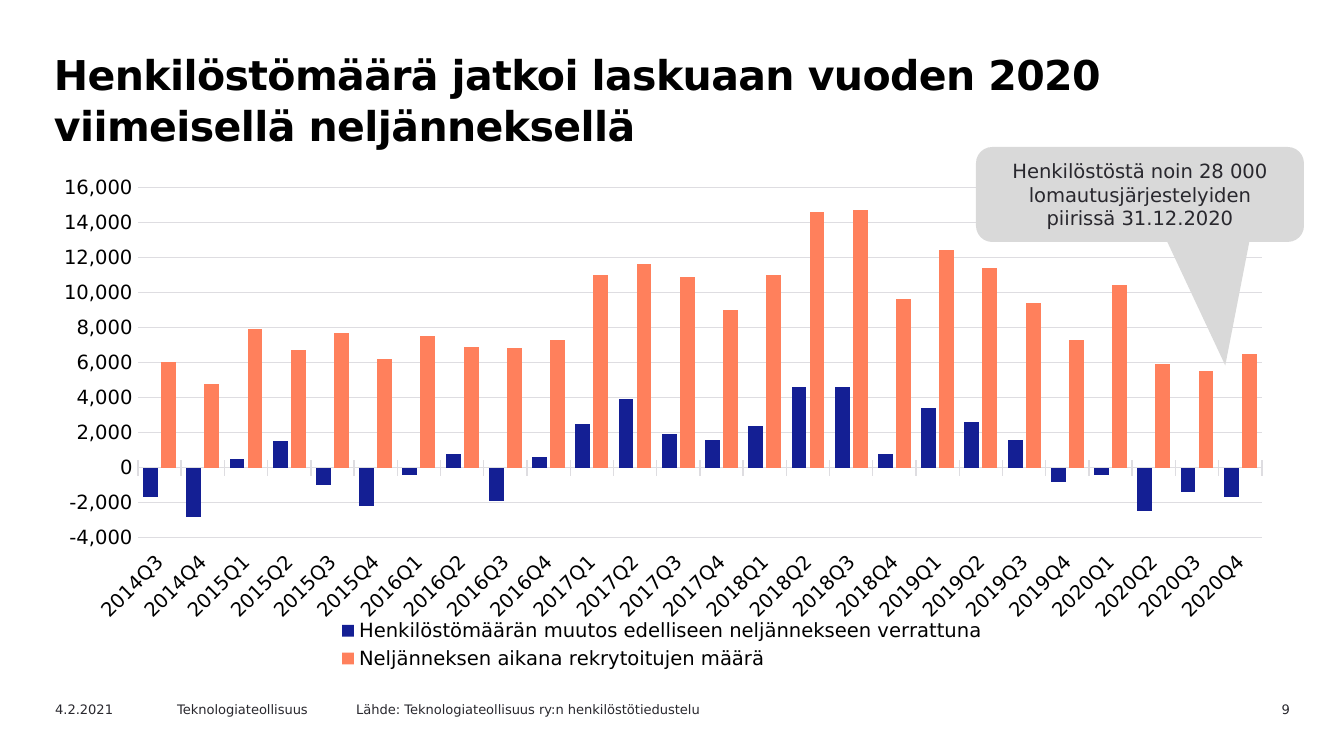
from lxml.etree import SubElement
from pptx import Presentation
from pptx.chart.data import CategoryChartData
from pptx.dml.color import RGBColor
from pptx.enum.chart import XL_CHART_TYPE, XL_LEGEND_POSITION, XL_TICK_LABEL_POSITION, XL_TICK_MARK
from pptx.enum.shapes import MSO_SHAPE
from pptx.enum.text import MSO_ANCHOR, MSO_AUTO_SIZE, PP_ALIGN
from pptx.oxml.ns import qn
from pptx.util import Emu, Pt

SCALE = 914400 / 134.4
FONT = "DejaVu Sans"
BLACK, DARK, GRID = "000000", "29282E", "DEDDE1"


def px(*lengths):
    return [Emu(round(length * SCALE)) for length in lengths]


def style(font, size, color, bold=False):
    font.name = FONT
    font.size = Pt(size)
    font.bold = bold
    font.color.rgb = RGBColor.from_string(color)


presentation = Presentation()
presentation.slide_width, presentation.slide_height = px(1344, 756)
slide = presentation.slides.add_slide(presentation.slide_layouts[5])

# Title
title = slide.shapes.title
title.left, title.top, title.width, title.height = px(38, 42, 1153, 95)
title_frame = title.text_frame
title_frame.text = "Henkilöstömäärä jatkoi laskuaan vuoden 2020 viimeisellä neljänneksellä"
title_frame.word_wrap = True
title_frame.auto_size = MSO_AUTO_SIZE.NONE
title_frame.vertical_anchor = MSO_ANCHOR.TOP
title_frame.margin_left = px(16)[0]
paragraph = title_frame.paragraphs[0]
paragraph.alignment = PP_ALIGN.LEFT
paragraph.line_spacing = Pt(27)
style(paragraph.runs[0].font, 22, BLACK, bold=True)
paragraph.runs[0]._r.get_or_add_rPr().set("spc", "-30")

# Footer line
footers = [
    ("4.2.2021", 42, 134, PP_ALIGN.LEFT),
    ("Teknologiateollisuus", 164, 191, PP_ALIGN.LEFT),
    ("Lähde: Teknologiateollisuus ry:n henkilöstötiedustelu", 343, 437, PP_ALIGN.LEFT),
    ("9", 1177, 126, PP_ALIGN.RIGHT),
]
for text, left, width, alignment in footers:
    footer = slide.shapes.add_textbox(*px(left, 695, width, 24))
    footer.text_frame.word_wrap = True
    footer.text_frame.text = text
    paragraph = footer.text_frame.paragraphs[0]
    paragraph.alignment = alignment
    style(paragraph.runs[0].font, 7, DARK)

# Chart data: quarters from 2014Q3 to 2020Q4
chart_data = CategoryChartData(number_format="#,##0")
chart_data.categories = [f"{2014 + n // 4}Q{n % 4 + 1}" for n in range(2, 28)]
chart_data.add_series(
    "Henkilöstömäärän muutos edelliseen neljännekseen verrattuna",
    [-1700, -2800, 500, 1500, -1000, -2200, -400, 800, -1900, 600, 2500, 3900, 1900,
     1600, 2400, 4600, 4600, 800, 3400, 2600, 1600, -800, -400, -2500, -1400, -1700])
chart_data.add_series(
    "Neljänneksen aikana rekrytoitujen määrä",
    [6000, 4800, 7900, 6700, 7700, 6200, 7500, 6900, 6800, 7300, 11000, 11600, 10900,
     9000, 11000, 14600, 14700, 9600, 12400, 11400, 9400, 7300, 10400, 5900, 5500, 6500])

# Column chart
chart = slide.shapes.add_chart(
    XL_CHART_TYPE.COLUMN_CLUSTERED, *px(38, 167, 1249, 508), chart_data).chart
style(chart.font, 10, DARK)
chart.has_title = False
plot = chart.plots[0]
plot.gap_width = 70
plot.overlap = -21
plot.vary_by_categories = False
for series, color in zip(plot.series, ("141F94", "FF805C")):
    series.invert_if_negative = False
    series.format.fill.solid()
    series.format.fill.fore_color.rgb = RGBColor.from_string(color)

# Axes
quarter_axis, value_axis = chart.category_axis, chart.value_axis
for axis in (quarter_axis, value_axis):
    style(axis.tick_labels.font, 10.5, BLACK)
quarter_axis.tick_label_position = XL_TICK_LABEL_POSITION.LOW
quarter_axis.major_tick_mark = XL_TICK_MARK.CROSS
quarter_axis.minor_tick_mark = XL_TICK_MARK.NONE
quarter_axis._element.find(qn("c:txPr")).find(qn("a:bodyPr")).set("rot", "-2700000")
value_axis.minimum_scale = -4000
value_axis.maximum_scale = 16000
value_axis.major_unit = 2000
value_axis.major_tick_mark = XL_TICK_MARK.NONE
value_axis.minor_tick_mark = XL_TICK_MARK.NONE
value_axis.tick_labels.number_format = "#,##0"
value_axis.tick_labels.number_format_is_linked = False
value_axis.format.line.fill.background()
for line in (quarter_axis.format.line, value_axis.major_gridlines.format.line):
    line.color.rgb = RGBColor.from_string(GRID)
    line.width = Pt(0.75)

# Plot area position, as shares of the chart
plot_area = chart._chartSpace.chart.plotArea
layout = plot_area.find(qn("c:layout"))
if layout is None:
    layout = SubElement(plot_area, qn("c:layout"))
    plot_area.insert(0, layout)
manual_layout = SubElement(layout, qn("c:manualLayout"))
for tag, value in (("layoutTarget", "inner"), ("xMode", "edge"), ("yMode", "edge"),
                   ("x", "0.08"), ("y", "0.04"), ("w", "0.9"), ("h", "0.69")):
    SubElement(manual_layout, qn(f"c:{tag}")).set("val", value)

# Legend
chart.has_legend = True
chart.legend.position = XL_LEGEND_POSITION.BOTTOM
chart.legend.include_in_layout = False
style(chart.legend.font, 10.5, BLACK)

# Callout
callout = slide.shapes.add_shape(
    MSO_SHAPE.ROUNDED_RECTANGULAR_CALLOUT, *px(976, 147, 328, 95))
for index, adjustment in enumerate((0.26, 1.8, 0.17)):
    callout.adjustments[index] = adjustment
callout.shadow.inherit = False
callout.fill.solid()
callout.fill.fore_color.rgb = RGBColor.from_string("D9D9D9")
callout.line.fill.background()
callout.text_frame.word_wrap = True
callout.text_frame.vertical_anchor = MSO_ANCHOR.MIDDLE
callout.text_frame.text = "Henkilöstöstä noin 28 000 lomautusjärjestelyiden piirissä 31.12.2020"
paragraph = callout.text_frame.paragraphs[0]
paragraph.alignment = PP_ALIGN.CENTER
style(paragraph.runs[0].font, 10.5, DARK)

presentation.save("out.pptx")
